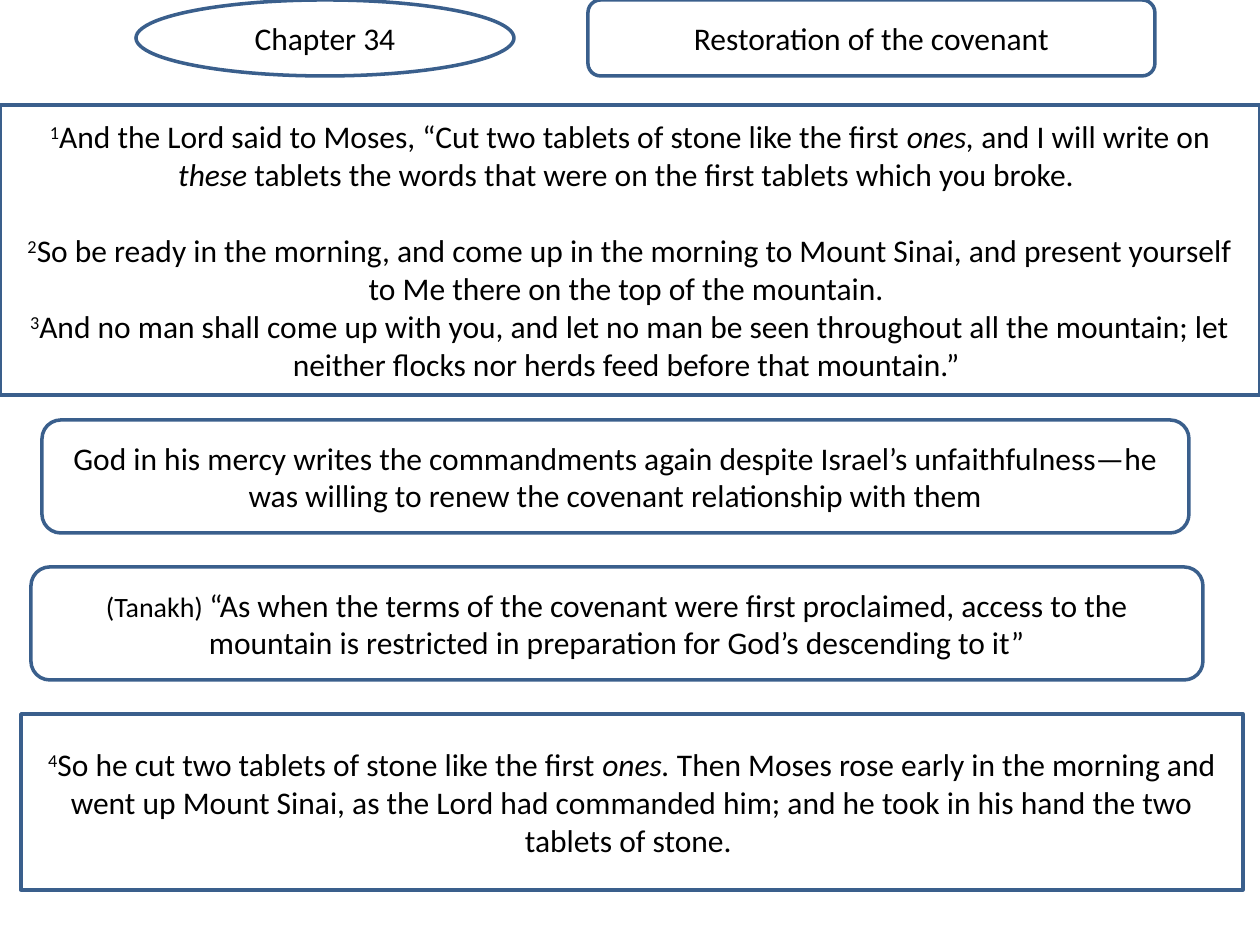
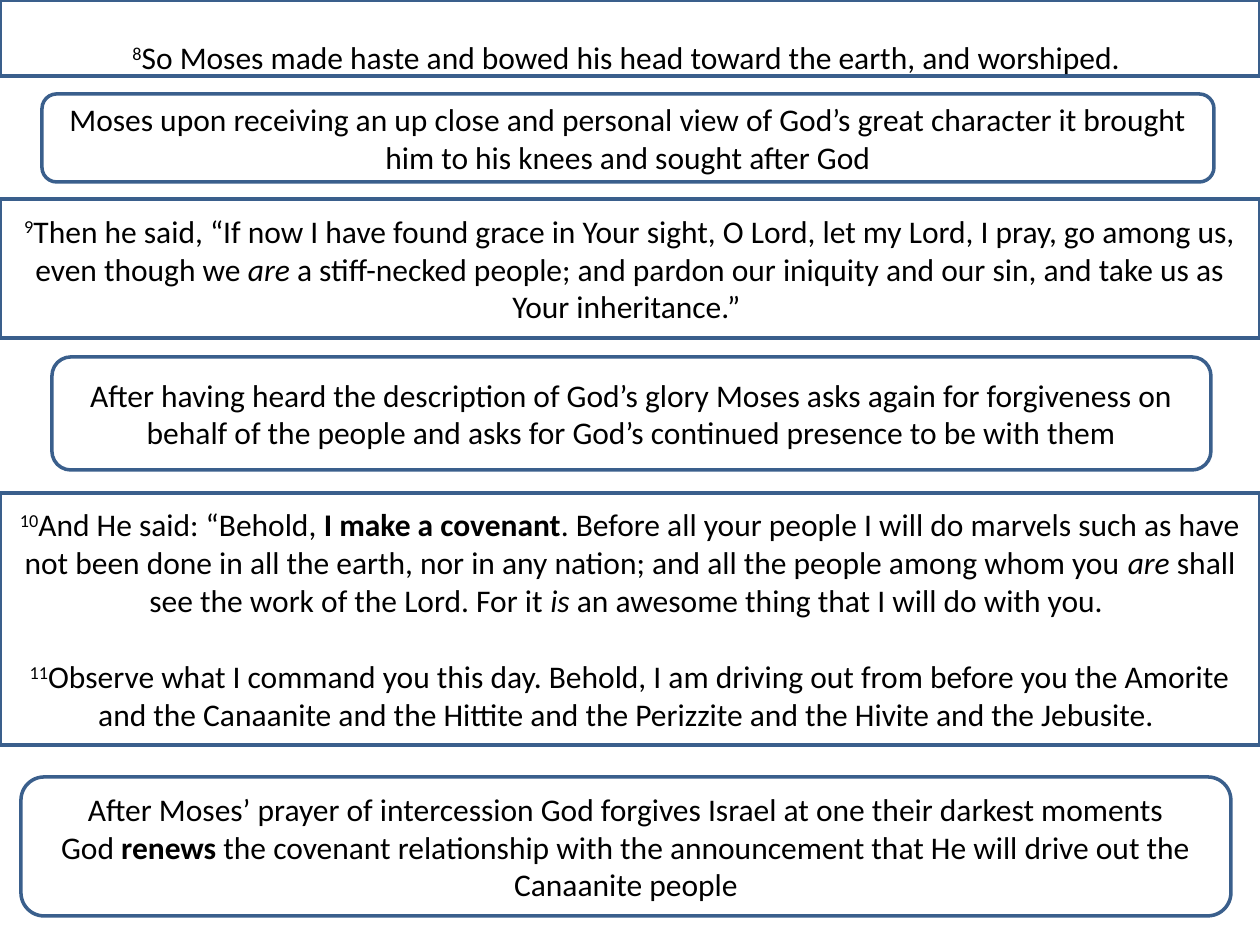
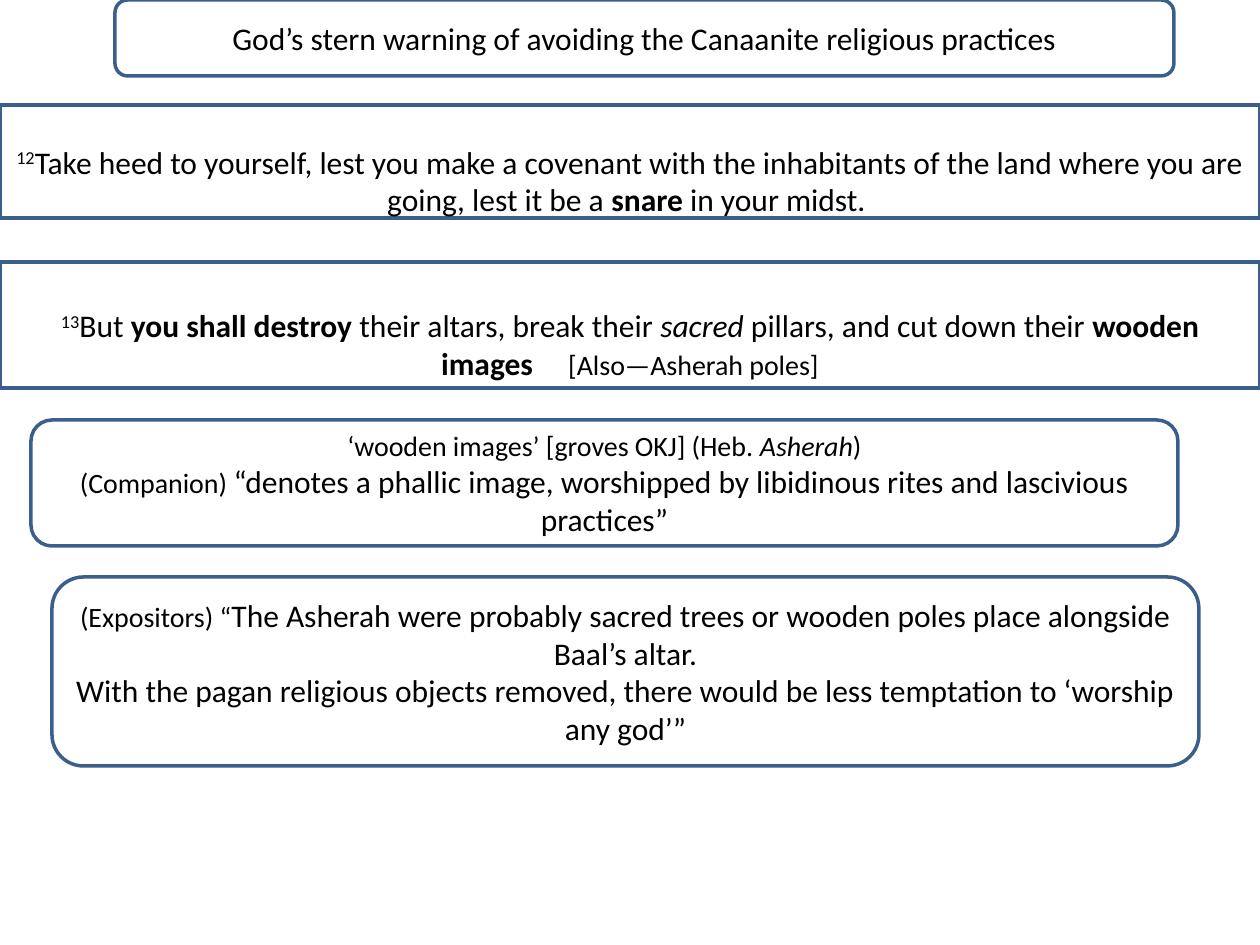
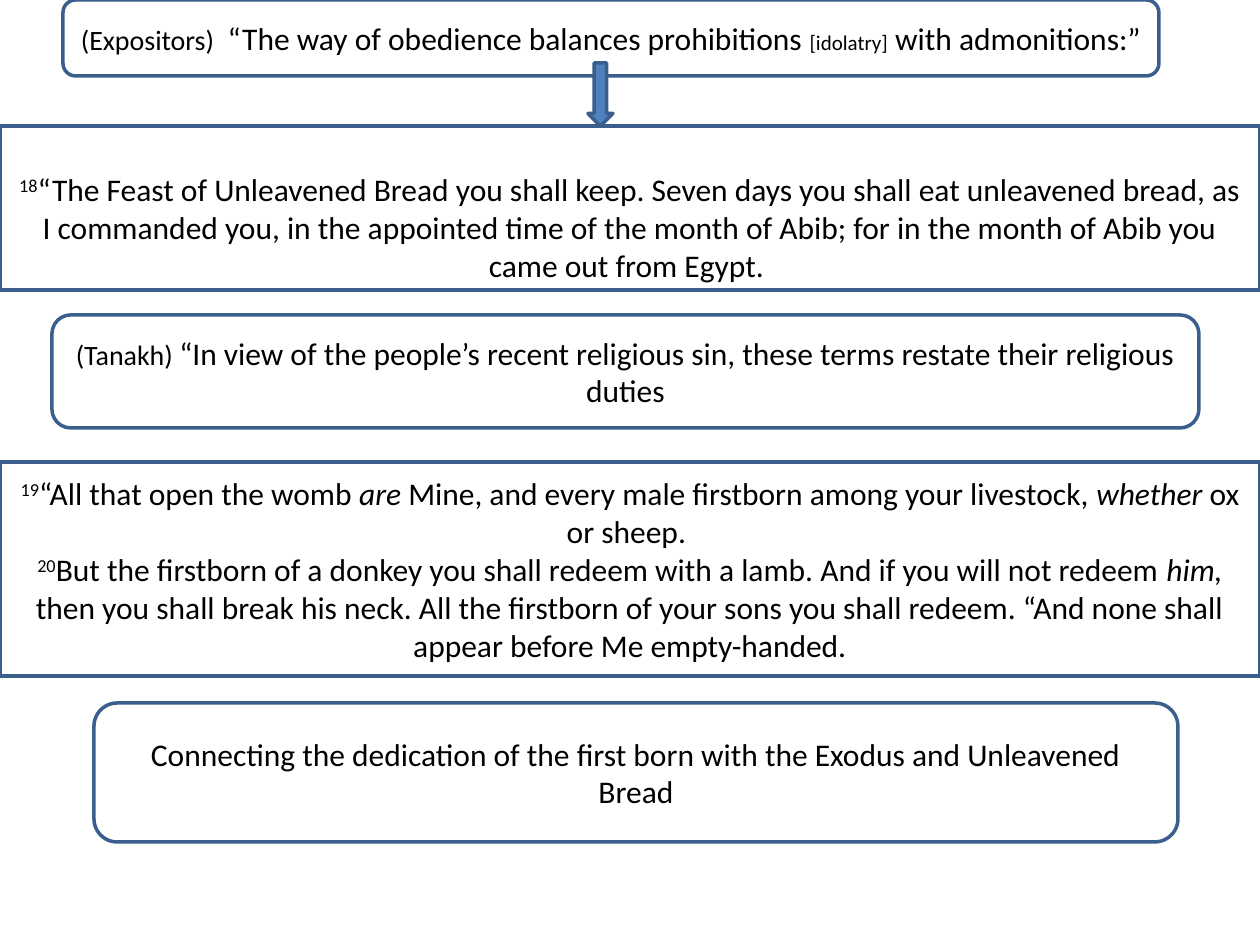
import pptx
import pptx.dml.color
import pptx.enum.shapes
import pptx.enum.text
import pptx.util

# Content: each slide lists (kind, (left, top, width, height), paragraphs) from back to front.
# A paragraph is a list of spans: plain text, or (text, style). "\n" is a line break.
SLIDES = [
    [
        ("chapter", (136, 0, 378, 76), [["Chapter 34"]]),
        ("verse", (0, 105, 1260, 290), [
            [("1", "number"), "And the Lord said to Moses, “Cut two tablets of stone like the first ",
             ("ones,", "italic"), " and I will write on ", ("these", "italic"),
             " tablets the words that were on the first tablets which you broke. "],
            [("2", "number"), "So be ready in the morning, and come up in the morning to Mount Sinai, "
             "and present yourself to Me there on the top of the mountain. ", "\n",
             ("3", "number"), "And no man shall come up with you, and let no man be seen throughout "
             "all the mountain; let neither flocks nor herds feed before that mountain.” "],
        ]),
        ("note", (42, 420, 1147, 113), [
            ["God in his mercy writes the commandments again despite Israel’s unfaithfulness—he "
             "was willing to renew the covenant relationship with them"],
        ]),
        ("note", (588, 0, 567, 76), [["Restoration of the covenant"]]),
        ("note", (31, 567, 1172, 113), [
            [("(Tanakh) ", "source"), "“As when the terms of the covenant were first proclaimed, access "
             "to the mountain is restricted in preparation for God’s descending to it”"],
        ]),
        ("verse", (21, 714, 1222, 176), [
            [("4", "number"), "So he cut two tablets of stone like the first ", ("ones.", "italic"),
             " Then Moses rose early in the morning and went up Mount Sinai, as the Lord had "
             "commanded him; and he took in his hand the two tablets of stone. "],
        ]),
    ],
    [
        ("verse", (0, 199, 1260, 139), [
            [("9", "number"), "Then he said, “If now I have found grace in Your sight, O Lord, let my "
             "Lord, I pray, go among us, even though we ", ("are", "italic"),
             " a stiff-necked people; and pardon our iniquity and our sin, and take us as "
             "Your inheritance.” "],
        ]),
        ("verse", (0, 493, 1260, 252), [
            [("10", "number"), "And He said: “Behold, ", ("I make a covenant", "bold"),
             ". Before all your people I will do marvels such as have not been done in all the earth, "
             "nor in any nation; and all the people among whom you ", ("are", "italic"),
             " shall see the work of the Lord. For it ", ("is", "italic"),
             " an awesome thing that I will do with you. "],
            [("11", "number"), "Observe what I command you this day. Behold, I am driving out from before "
             "you the Amorite and the Canaanite and the Hittite and the Perizzite and the Hivite "
             "and the Jebusite. "],
        ]),
        ("note", (52, 357, 1159, 113), [
            ["After having heard the description of God’s glory Moses asks again for forgiveness on "
             "behalf of the people and asks for God’s continued presence to be with them"],
        ]),
        ("note", (21, 777, 1210, 139), [
            ["After Moses’ prayer of intercession God forgives Israel at one their darkest moments"],
            ["God ", ("renews", "bold"), " the covenant relationship with the announcement that "
             "He will drive out the Canaanite people"],
        ]),
        ("low verse", (0, 0, 1260, 76), [
            [("8", "number"), "So Moses made haste and bowed his head toward the earth, and worshiped. "],
        ]),
        ("note", (42, 94, 1172, 88), [
            ["Moses upon receiving an up close and personal view of God’s great character it brought "
             "him to his knees and sought after God"],
        ]),
    ],
    [
        ("low verse", (0, 105, 1260, 113), [
            [("12", "number"), "Take heed to yourself, lest you make a covenant with the inhabitants of "
             "the land where you are going, lest it be a ", ("snare ", "bold"), "in your midst. "],
        ]),
        ("note", (115, 0, 1059, 76), [
            ["God’s stern warning of avoiding the Canaanite religious practices"],
        ]),
        ("note", (31, 420, 1147, 126), [
            [("‘wooden images’ [groves OKJ] (Heb. ", "source"), ("Asherah", "source italic"),
             (")", "source")],
            [("(Companion) ", "source"), "“denotes a phallic image, worshipped by libidinous rites "
             "and lascivious practices”"],
        ]),
        ("low verse", (0, 262, 1260, 126), [
            [("13", "number"), "But ", ("you shall destroy ", "bold"), "their altars, break their ",
             ("sacred", "italic"), " pillars, and cut down their ", ("wooden images", "bold"),
             (" ", "wide gap"), ("[Also—Asherah poles]", "source")],
        ]),
        ("note", (52, 577, 1147, 189), [
            [("(Expositors) “", "source"), "The Asherah were probably sacred trees or wooden poles "
             "place alongside Baal’s altar."],
            ["With the pagan religious objects removed, there would be less temptation to "
             "‘worship any god’”"],
        ]),
    ],
    [
        ("low verse", (0, 126, 1260, 164), [
            [("18", "number"), "“The Feast of Unleavened Bread you shall keep. Seven days you shall eat "
             "unleavened bread, as I commanded you, in the appointed time of the month of Abib; "
             "for in the month of Abib you came out from Egypt. "],
        ]),
        ("note", (63, 0, 1096, 76), [
            [("(Expositors)", "source"), (" ", "narrow gap"),
             "“The way of obedience balances prohibitions ", ("[idolatry]", "aside"),
             " with admonitions:”"],
        ]),
        ("arrow", (588, 63, 25, 63), []),
        ("verse", (0, 462, 1260, 214), [
            [("19", "number"), "“All that open the womb ", ("are", "italic"),
             " Mine, and every male firstborn among your livestock, ", ("whether", "italic"),
             " ox or sheep. ", "\n",
             ("20", "number"), "But the firstborn of a donkey you shall redeem with a lamb. And if you "
             "will not redeem ", ("him,", "italic"),
             " then you shall break his neck. All the firstborn of your sons you shall redeem. "
             "“And none shall appear before Me empty-handed."],
        ]),
        ("note", (52, 315, 1147, 113), [
            [("(Tanakh) ", "source"), "“In view of the people’s recent religious sin, these terms "
             "restate their religious duties"],
        ]),
        ("note", (94, 703, 1084, 139), [
            ["Connecting the dedication of the first born with the Exodus and Unleavened Bread"],
        ]),
    ],
]

# Theme
SHAPES = pptx.enum.shapes.MSO_SHAPE
THEME = {
    "paper": "FFFFFF", "ink": "000000", "outline": "3A5F8C", "accent": "4F81BD",
    "font": "Calibri", "body": 18, "outline width": 2, "line": 22,
}
KINDS = {
    "chapter": {"shape": SHAPES.OVAL},
    "note": {"shape": SHAPES.ROUNDED_RECTANGLE},
    "verse": {"shape": SHAPES.RECTANGLE, "gap": THEME["line"]},
    "low verse": {"shape": SHAPES.RECTANGLE, "insets": {"margin_top": 38, "margin_bottom": 0}},
    "arrow": {"shape": SHAPES.DOWN_ARROW, "fill": "accent"},
}
STYLES = {
    "plain": {},
    "italic": {"italic": True},
    "bold": {"bold": True},
    "source": {"size": pptx.util.Pt(16)},
    "source italic": {"size": pptx.util.Pt(16), "italic": True},
    "aside": {"size": pptx.util.Pt(12)},
}
# Run attributes: raised verse numbers, and single spaces widened by letter spacing
RUN_XML = {
    "number": {"baseline": "30000"},
    "wide gap": {"spc": "1600"},
    "narrow gap": {"spc": "360"},
}
PAGE_WIDTH, PAGE_HEIGHT = 1260, 945
PX_PER_INCH = 126


def px(length):
    return pptx.util.Emu(round(length * pptx.util.Inches(1) / PX_PER_INCH))


def colour(name):
    return pptx.dml.color.RGBColor.from_string(THEME[name])


def add_span(para, item):
    text, style = item if isinstance(item, tuple) else (item, "plain")
    if text == "\n":
        para.add_line_break()
        return
    span = para.add_run()
    span.text = text
    font = {"name": THEME["font"], "size": pptx.util.Pt(THEME["body"])}
    for name, value in (font | STYLES.get(style, {})).items():
        setattr(span.font, name, value)
    span.font.color.rgb = colour("ink")
    for name, value in RUN_XML.get(style, {}).items():
        span._r.get_or_add_rPr().set(name, value)


def add_box(page, kind, place, paragraphs):
    look = KINDS[kind]
    box = page.shapes.add_shape(look["shape"], *map(px, place))
    box.shadow.inherit = False
    box.fill.solid()
    box.fill.fore_color.rgb = colour(look.get("fill", "paper"))
    box.line.color.rgb = colour("outline")
    box.line.width = pptx.util.Pt(THEME["outline width"])

    frame = box.text_frame
    frame.word_wrap = True
    frame.vertical_anchor = pptx.enum.text.MSO_ANCHOR.MIDDLE
    for name, value in look.get("insets", {}).items():
        setattr(frame, name, px(value))
    for index, items in enumerate(paragraphs):
        para = frame.add_paragraph() if index else frame.paragraphs[0]
        para.alignment = pptx.enum.text.PP_ALIGN.CENTER
        if index and "gap" in look:
            para.space_before = pptx.util.Pt(look["gap"])
        for item in items:
            add_span(para, item)


def main():
    deck = pptx.Presentation()
    deck.slide_width, deck.slide_height = px(PAGE_WIDTH), px(PAGE_HEIGHT)
    blank = deck.slide_layouts[6]
    for boxes in SLIDES:
        page = deck.slides.add_slide(blank)
        for kind, place, paragraphs in boxes:
            add_box(page, kind, place, paragraphs)
    deck.save("out.pptx")


if __name__ == "__main__":
    main()
